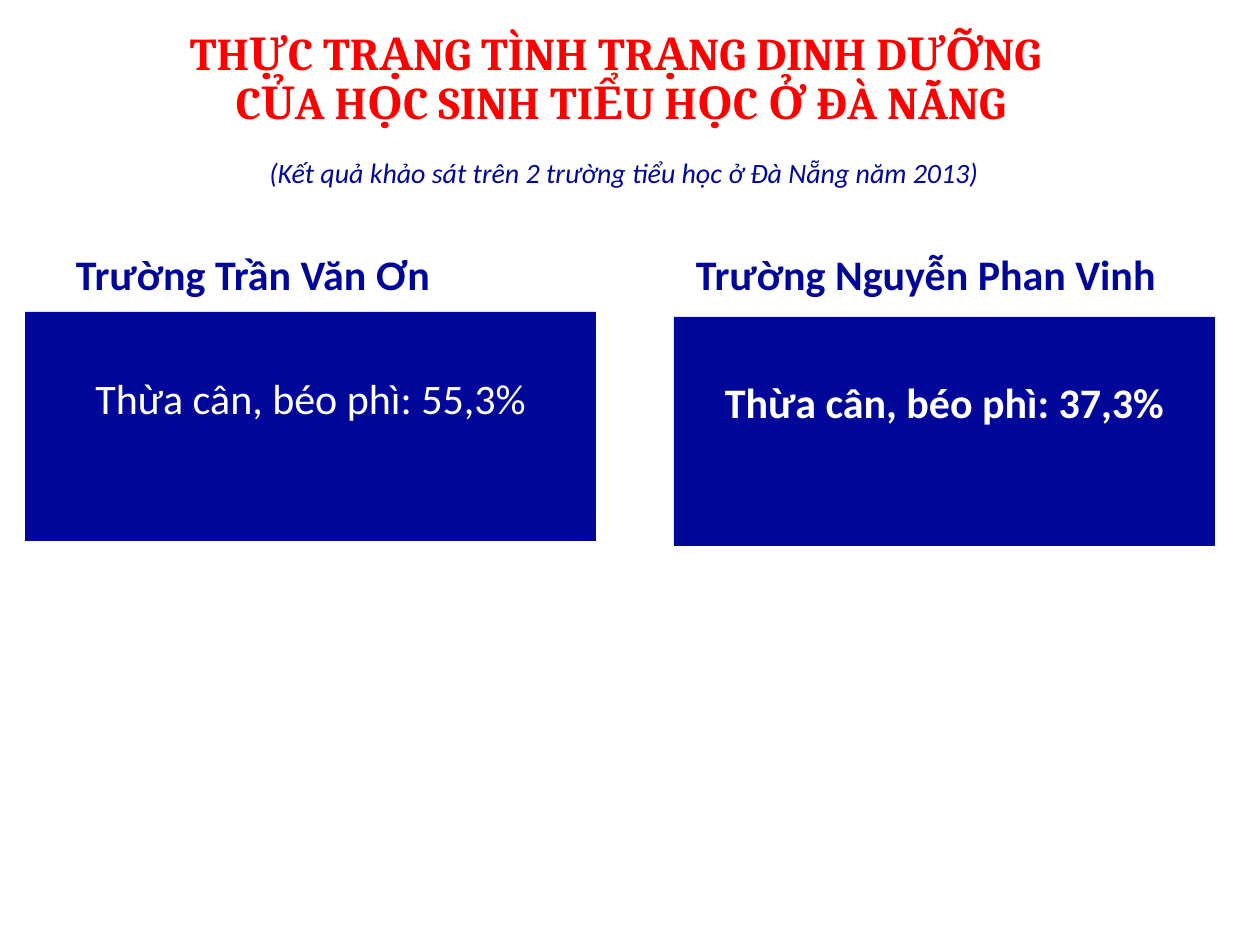
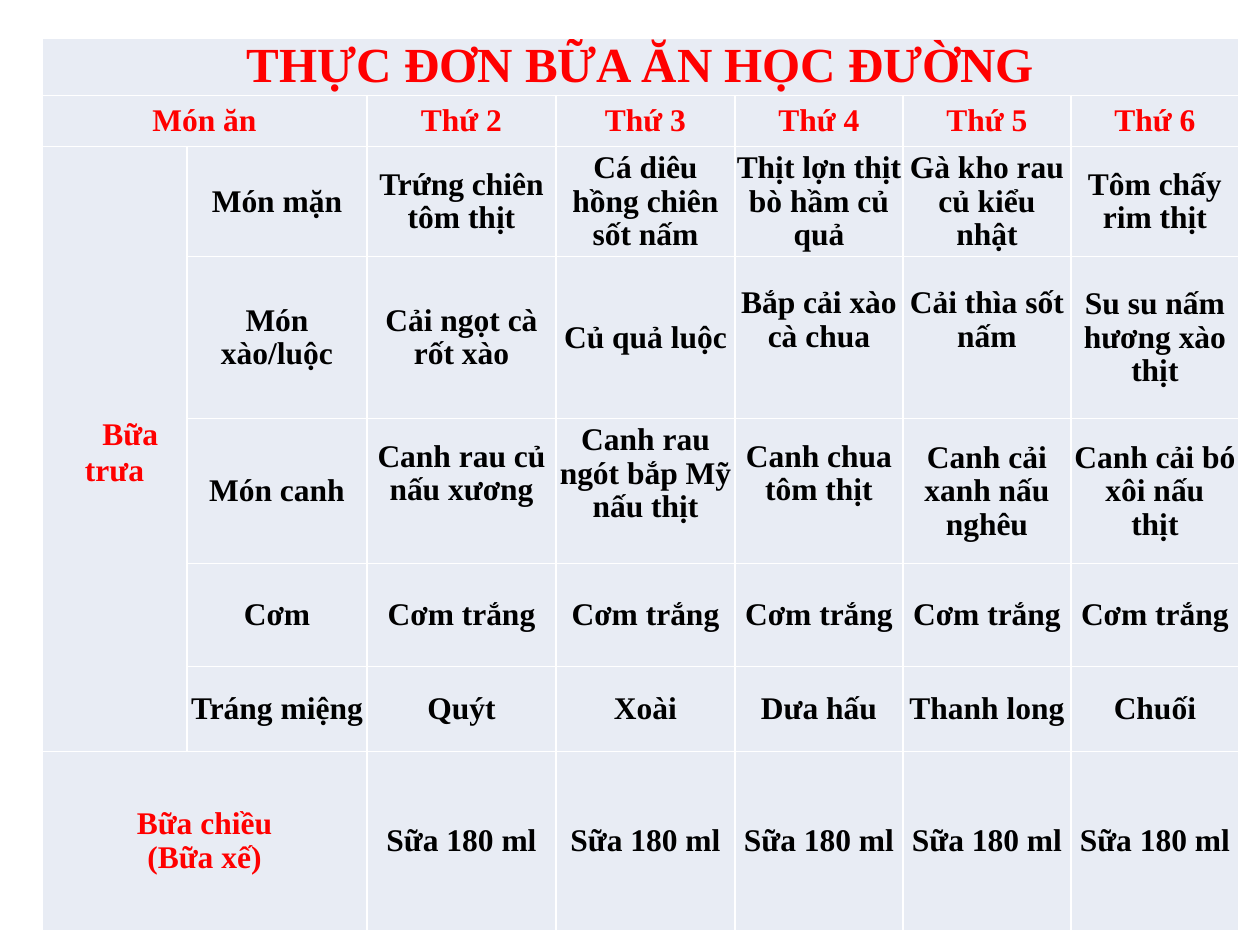
from lxml import etree
from pptx import Presentation
from pptx.dml.color import RGBColor
from pptx.enum.shapes import MSO_SHAPE
from pptx.enum.text import MSO_ANCHOR, PP_ALIGN
from pptx.oxml.ns import qn
from pptx.util import Pt

PX_PER_INCH = 126
RECTANGLE = MSO_SHAPE.RECTANGLE
LEFT, CENTER = PP_ALIGN.LEFT, PP_ALIGN.CENTER
TOP, MIDDLE = MSO_ANCHOR.TOP, MSO_ANCHOR.MIDDLE
COLORS = {"red": "FF0000", "navy": "010899", "white": "FFFFFF",
          "black": "000000", "cell": "E8ECF4"}


def px(length):
    return round(length * 914400 / PX_PER_INCH)


def rgb(name):
    return RGBColor.from_string(COLORS[name])


class Deck:
    """Holds the style and the current slide."""

    insets = {"margin_left": 13, "margin_top": 6, "margin_right": 13, "margin_bottom": 6}
    cell_insets = {"margin_left": 1, "margin_top": 1, "margin_right": 1, "margin_bottom": 0}

    def __init__(self):
        self.prs = Presentation()
        self.prs.slide_width, self.prs.slide_height = px(1260), px(945)
        self.slide = None

    def new_slide(self):
        self.slide = self.prs.slides.add_slide(self.prs.slide_layouts[6])

    def fill_text(self, frame, text, color, align=CENTER, spacing=None, **font):
        """Fill a text frame; a newline in the text is a line break."""
        paragraph = frame.paragraphs[0]
        paragraph.text = text
        paragraph.alignment = align
        paragraph.line_spacing = spacing
        for run in paragraph.runs:
            for key, value in font.items():
                setattr(run.font, key, value)
            run.font.color.rgb = rgb(color)

    def frame(self, shape, anchor=TOP, **insets):
        frame = shape.text_frame
        frame.word_wrap = True
        frame.vertical_anchor = anchor
        for side, length in {**self.insets, **insets}.items():
            setattr(frame, side, px(length))
        return frame

    def text(self, box, text, color, anchor=TOP, **style):
        shape = self.slide.shapes.add_textbox(*map(px, box))
        self.fill_text(self.frame(shape, anchor), text, color, **style)

    def panel(self, box, text, **style):
        """A navy block whose text starts one line below the top."""
        shape = self.slide.shapes.add_shape(RECTANGLE, *map(px, box))
        shape.shadow.inherit = False
        shape.fill.solid()
        shape.fill.fore_color.rgb = rgb("navy")
        shape.line.fill.background()
        self.fill_text(self.frame(shape, margin_top=60), text, "white", **style)

    def table(self, left, top, widths, heights):
        table = self.slide.shapes.add_table(
            len(heights), len(widths), px(left), px(top),
            px(sum(widths)), px(sum(heights))).table
        table.first_row = table.horz_banding = False
        for column, width in zip(table.columns, widths):
            column.width = px(width)
        for row, height in zip(table.rows, heights):
            row.height = px(height)
        for cell in table.iter_cells():
            self.style_cell(cell)
        return table

    def style_cell(self, cell):
        cell.vertical_anchor = MIDDLE
        for side, length in self.cell_insets.items():
            setattr(cell, side, px(length))
        properties = cell._tc.get_or_add_tcPr()
        for tag in ("a:lnL", "a:lnR", "a:lnT", "a:lnB"):
            border = etree.SubElement(properties, qn(tag), w=str(Pt(1)))
            fill = etree.SubElement(border, qn("a:solidFill"))
            etree.SubElement(fill, qn("a:srgbClr"), val=COLORS["white"])
        cell.fill.solid()
        cell.fill.fore_color.rgb = rgb("cell")


# Survey of two schools: (name, name left, panel box, result, bold)
SCHOOLS = [
    ("Trường Trần Văn Ơn", 63, (25, 312, 571, 229), "Thừa cân, béo phì: 55,3%", False),
    ("Trường Nguyễn Phan Vinh", 683, (674, 317, 541, 229), "Thừa cân, béo phì: 37,3%", True),
]

# School menu, None where a merged cell covers the place
DAYS = 5
MENU = [
    ["THỰC ĐƠN BỮA ĂN HỌC ĐƯỜNG"],
    ["Món ăn", None] + [f"Thứ {day}" for day in range(2, 2 + DAYS)],
    ["　Bữa trưa", "Món mặn", "Trứng chiên tôm thịt", "Cá diêu hồng chiên sốt nấm",
     "Thịt lợn thịt bò hầm củ quả", "Gà kho rau củ kiểu nhật", "Tôm chấy rim thịt"],
    [None, "Món xào/luộc", "Cải ngọt cà rốt xào", "Củ quả luộc",
     "Bắp cải xào cà chua", "Cải thìa sốt nấm", "Su su nấm hương xào thịt"],
    [None, "Món canh", "Canh rau củ nấu xương", "Canh rau ngót bắp Mỹ nấu thịt",
     "Canh chua tôm thịt", "Canh cải xanh nấu nghêu", "Canh cải bó xôi nấu\nthịt"],
    [None, "Cơm"] + ["Cơm trắng"] * DAYS,
    [None, "Tráng miệng", "Quýt", "Xoài", "Dưa hấu", "Thanh long", "Chuối"],
    ["Bữa chiều\n(Bữa xế)", None] + ["Sữa 180 ml"] * DAYS,
]
COLUMN_WIDTHS = [145, 180, 189, 179, 168, 168, 168]
ROW_HEIGHTS = [54, 51, 109, 162, 145, 103, 85, 179]
MERGES = [((0, 0), (0, 6)), ((1, 0), (1, 1)), ((2, 0), (6, 0)), ((7, 0), (7, 1))]
RAISED_CELLS = {(3, 4), (3, 5), (4, 2), (4, 3), (4, 4)}
LINE_HEIGHT = 35


def survey_slide(deck):
    deck.new_slide()
    deck.text((54, 1, 1134, 158),
              "THỰC TRẠNG TÌNH TRẠNG DINH DƯỠNG \nCỦA HỌC SINH TIỂU HỌC Ở ĐÀ NẴNG",
              "red", MIDDLE, spacing=0.9, name="Cambria", size=Pt(26), bold=True)
    deck.text((44, 150, 1160, 47),
              "(Kết quả khảo sát trên 2 trường tiểu học ở Đà Nẵng năm 2013)",
              "navy", name="Calibri", size=Pt(16), italic=True)
    for school, left, panel_box, result, bold in SCHOOLS:
        deck.panel(panel_box, result, name="Calibri", size=Pt(24), bold=bold)
        deck.text((left, 243, 514, 63), school, "navy", align=LEFT,
                  name="Calibri", size=Pt(24), bold=True)


def menu_slide(deck):
    deck.new_slide()
    table = deck.table(42, 38, COLUMN_WIDTHS, ROW_HEIGHTS)
    for first, last in MERGES:
        table.cell(*first).merge(table.cell(*last))
    for row, dishes in enumerate(MENU):
        for column, dish in enumerate(dishes):
            if dish is None:
                continue
            cell = table.cell(row, column)
            heading = row < 2 or column == 0
            deck.fill_text(cell.text_frame, dish, "red" if heading else "black",
                           spacing=0.96, name="Times New Roman",
                           size=Pt(18 if row else 28), bold=True)
            if (row, column) in RAISED_CELLS:
                cell.margin_bottom = px(LINE_HEIGHT)


def main():
    deck = Deck()
    survey_slide(deck)
    menu_slide(deck)
    deck.prs.save("out.pptx")


if __name__ == "__main__":
    main()
